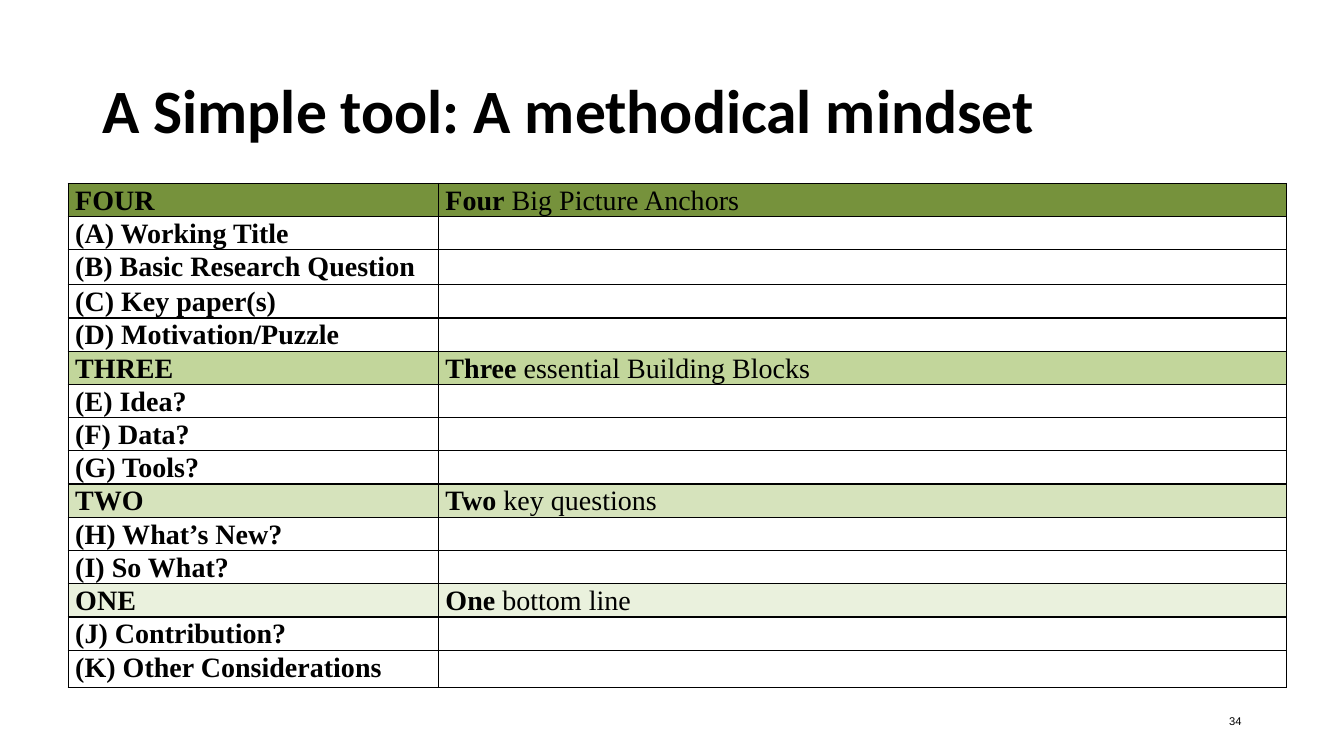
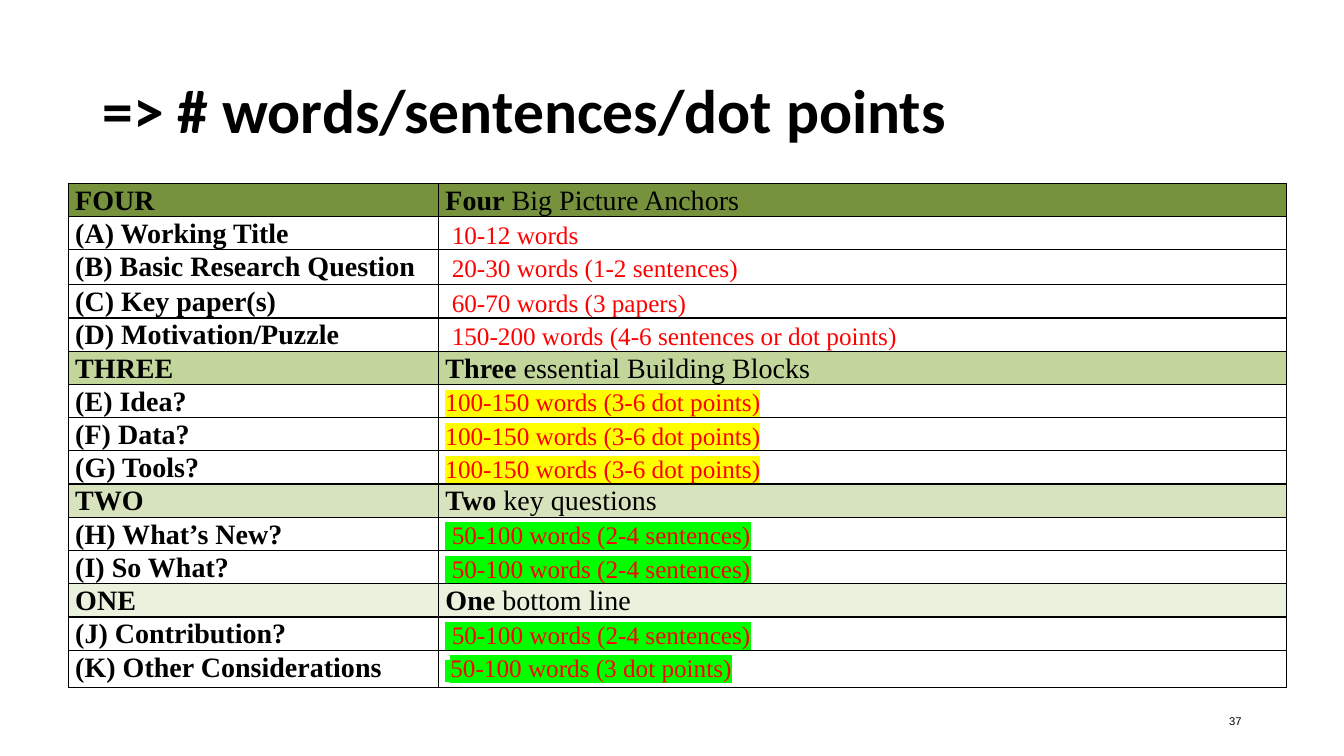
from lxml.etree import SubElement
from pptx import Presentation
from pptx.dml.color import RGBColor
from pptx.enum.text import MSO_ANCHOR, PP_ALIGN
from pptx.oxml import parse_xml
from pptx.oxml.ns import nsdecls, qn
from pptx.util import Pt

COLORS = {
    "ink": "000000", "paper": "FFFFFF", "guide": "FF0000",
    "yellow": "FFFF00", "green": "00FF00",
    "four": "76923C", "three": "C2D69B", "two": "D6E3BC", "one": "EAF1DD",
}
TITLE_FONT, NUMBER_FONT, TABLE_FONT = "Calibri", "Arial", "Times New Roman"
LABEL_SIZE, GUIDE_SIZE = 20, 18
TABLE_LEFT, TABLE_TOP = 48.75, 131
COLUMN_WIDTHS = (264.5, 605.5)
ROW_HEIGHT, LINE_HEIGHT = 23.75, 23.5
TALL_ROWS = {"(B) Basic Research Question": 25, "(K) Other Considerations": 26.5}

# Section: colour key, bold word, rest of heading, item labels
SECTIONS = [
    ("four", "Four", " Big Picture Anchors",
     ["(A) Working Title", "(B) Basic Research Question",
      "(C) Key paper(s)", "(D) Motivation/Puzzle"]),
    ("three", "Three", " essential Building Blocks",
     ["(E) Idea?", "(F) Data?", "(G) Tools?"]),
    ("two", "Two", " key questions", ["(H) What’s New?", "(I) So What?"]),
    ("one", "One", " bottom line",
     ["(J) Contribution?", "(K) Other Considerations"]),
]

# Section: highlight, then the runs (text, size) of each item
BLOCK_GUIDE = [("100-150 words (3-6 dot points)", GUIDE_SIZE)]
SENTENCE_GUIDE = [(" 50-100 words (2-4 sentences)", GUIDE_SIZE)]
LENGTH_GUIDES = {
    "four": (None, [[(text, GUIDE_SIZE)] for text in (
        " 10-12 words", " 20-30 words (1-2 sentences)",
        " 60-70 words (3 papers)",
        " 150-200 words (4-6 sentences or dot points)")]),
    "three": ("yellow", [BLOCK_GUIDE] * 3),
    "two": ("green", [SENTENCE_GUIDE] * 2),
    "one": ("green", [SENTENCE_GUIDE,
                      [(" ", 14), ("50-100 words (3 dot points)", GUIDE_SIZE)]]),
}


def rgb(name):
    return RGBColor.from_string(COLORS[name])


def add_run(para, text, size, font, color="ink", bold=False, highlight=None):
    span = para.add_run()
    span.text = text
    span.font.size = Pt(size)
    span.font.name = font
    span.font.bold = bold
    span.font.color.rgb = rgb(color)
    if highlight:
        mark = parse_xml(f'<a:highlight {nsdecls("a")}>'
                         f'<a:srgbClr val="{COLORS[highlight]}"/></a:highlight>')
        span.font._element.find(qn("a:solidFill")).addnext(mark)


def place(box, left, top, width, height):
    box.left, box.top, box.width, box.height = map(Pt, (left, top, width, height))
    box.text_frame.vertical_anchor = MSO_ANCHOR.MIDDLE
    box.text_frame.word_wrap = True


def add_title(page, text):
    box = page.shapes.title
    place(box, 66, 29, 828, 104.5)
    para = box.text_frame.paragraphs[0]
    para.alignment = PP_ALIGN.LEFT
    para.line_spacing = 0.9
    add_run(para, text, 44, TITLE_FONT, bold=True)


def add_page_number(page, number):
    box = page.shapes.add_textbox(0, 0, 0, 0)
    place(box, 678, 500.5, 216, 29)
    para = box.text_frame.paragraphs[0]
    para.alignment = PP_ALIGN.RIGHT
    add_run(para, str(number), 8, NUMBER_FONT)


def add_borders(cell):
    properties = cell._tc.get_or_add_tcPr()
    for index, side in enumerate(("lnL", "lnR", "lnT", "lnB")):
        line = parse_xml(f'<a:{side} {nsdecls("a")} w="{Pt(1)}"/>')
        fill = SubElement(line, qn("a:solidFill"))
        SubElement(fill, qn("a:srgbClr"), val=COLORS["ink"])
        properties.insert(index, line)


def format_cell(cell, fill):
    """Style a cell and return its paragraph."""
    cell.margin_left = cell.margin_right = Pt(5)
    cell.margin_top = cell.margin_bottom = 0
    cell.fill.solid()
    cell.fill.fore_color.rgb = rgb(fill)
    add_borders(cell)
    para = cell.text_frame.paragraphs[0]
    para.line_spacing = Pt(LINE_HEIGHT)
    return para


def fill_heading(row, section, word, rest):
    row.height = Pt(ROW_HEIGHT)
    label, heading = (format_cell(cell, section) for cell in row.cells)
    add_run(label, word.upper(), LABEL_SIZE, TABLE_FONT, bold=True)
    add_run(heading, word, LABEL_SIZE, TABLE_FONT, bold=True)
    add_run(heading, rest, LABEL_SIZE, TABLE_FONT)


def fill_item(row, label, guide, highlight):
    row.height = Pt(TALL_ROWS.get(label, ROW_HEIGHT))
    label_para, guide_para = (format_cell(cell, "paper") for cell in row.cells)
    add_run(label_para, label, LABEL_SIZE, TABLE_FONT, bold=True)
    for text, size in guide:
        add_run(guide_para, text, size, TABLE_FONT, "guide", highlight=highlight)


def add_pitch_table(page, guides):
    count = sum(1 + len(labels) for *_, labels in SECTIONS)
    height = (count - len(TALL_ROWS)) * ROW_HEIGHT + sum(TALL_ROWS.values())
    table = page.shapes.add_table(
        count, len(COLUMN_WIDTHS), Pt(TABLE_LEFT), Pt(TABLE_TOP),
        Pt(sum(COLUMN_WIDTHS)), Pt(height)).table
    table.first_row = table.horz_banding = False
    for column, width in zip(table.columns, COLUMN_WIDTHS):
        column.width = Pt(width)
    rows = iter(table.rows)
    for section, word, rest, labels in SECTIONS:
        fill_heading(next(rows), section, word, rest)
        highlight, texts = guides.get(section, (None, [[]] * len(labels)))
        for label, guide in zip(labels, texts):
            fill_item(next(rows), label, guide, highlight)


def add_page(deck, title, number, guides):
    page = deck.slides.add_slide(deck.slide_layouts[5])
    add_title(page, title)
    add_page_number(page, number)
    add_pitch_table(page, guides)


def main():
    deck = Presentation()
    deck.slide_width, deck.slide_height = Pt(960), Pt(540)
    add_page(deck, "A Simple tool: A methodical mindset", 34, {})
    add_page(deck, "=> # words/sentences/dot points", 37, LENGTH_GUIDES)
    deck.save("out.pptx")


if __name__ == "__main__":
    main()
